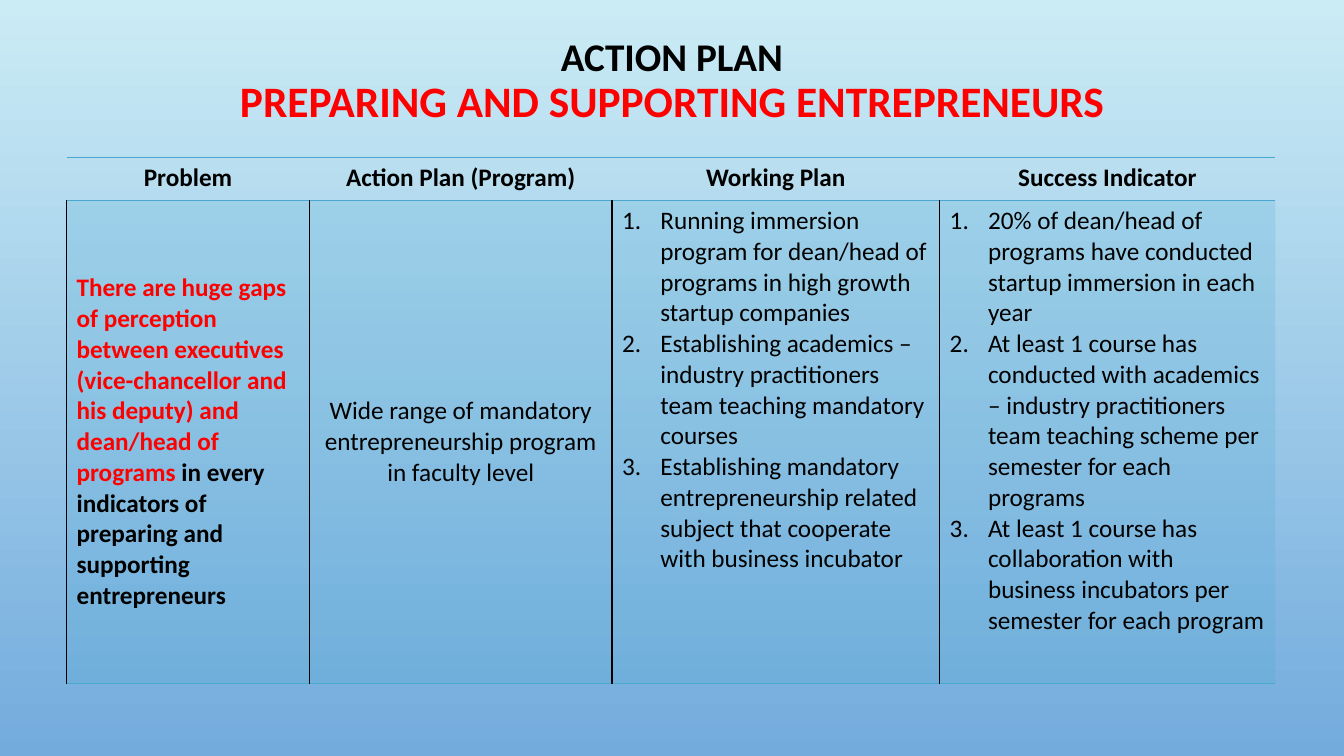
"""Build the action plan slide for preparing and supporting entrepreneurs."""
from pptx import Presentation
from pptx.dml.color import RGBColor
from pptx.enum.text import MSO_ANCHOR, PP_ALIGN
from pptx.oxml.ns import qn
from pptx.util import Inches, Pt
from lxml.etree import SubElement

FONT = "Calibri"
BLACK = RGBColor(0x00, 0x00, 0x00)
RED = RGBColor(0xFF, 0x00, 0x00)
TEAL = RGBColor(0x48, 0xA8, 0xD0)
SKY_TOP = RGBColor(0xCB, 0xEC, 0xF5)
SKY_BOTTOM = RGBColor(0x73, 0xAB, 0xDD)

HEADERS = ["Problem", "Action Plan (Program)", "Working Plan", "Success Indicator"]
COLUMN_WIDTHS = [2.41, 3, 3.25, 3.33]
ROW_HEIGHTS = [0.43, 4.79]
PROBLEM = [
    ("There are huge gaps of perception between executives (vice-chancellor and "
     "his deputy) and dean/head of programs ", RED),
    ("in every indicators of preparing and supporting entrepreneurs", BLACK),
]
PROGRAM = "Wide range of mandatory entrepreneurship program in faculty level"
WORKING_PLAN = [
    "Running immersion program for dean/head of programs in high growth startup companies",
    "Establishing academics – industry practitioners team teaching mandatory courses",
    "Establishing mandatory entrepreneurship related subject that cooperate with "
    "business incubator",
]
SUCCESS_INDICATORS = [
    "20% of dean/head of programs have conducted startup immersion in each year",
    "At least 1 course has conducted with academics – industry practitioners team "
    "teaching scheme per semester for each programs",
    "At least 1 course has collaboration with business incubators per semester for "
    "each program",
]


def format_run(r, size=18, color=BLACK, bold=False):
    """Set the font of a run."""
    r.font.name = FONT
    r.font.size = Pt(size)
    r.font.bold = bold
    r.font.color.rgb = color


def set_background(s):
    """Fill the slide with a vertical gradient."""
    fill = s.background.fill
    fill.gradient()
    fill.gradient_angle = 270
    for stop, color in zip(fill.gradient_stops, (SKY_TOP, SKY_BOTTOM)):
        stop.color.rgb = color


def add_title(s):
    """Add the two-line title."""
    box = s.shapes.add_textbox(Inches(1), Inches(0.31), Inches(11.33), Inches(1.02))
    tf = box.text_frame
    tf.word_wrap = True
    tf.vertical_anchor = MSO_ANCHOR.MIDDLE
    p = tf.paragraphs[0]
    p.text = "ACTION PLAN\vPREPARING AND SUPPORTING ENTREPRENEURS"
    p.alignment = PP_ALIGN.CENTER
    p.line_spacing = 0.9
    for r, size, color in zip(p.runs, (28, 31), (BLACK, RED)):
        format_run(r, size, color, True)


def set_borders(cell, **colors):
    """Draw the named cell borders and clear the others."""
    tcPr = cell._tc.get_or_add_tcPr()
    for i, side in enumerate("LRTB"):
        ln = SubElement(tcPr, qn(f"a:ln{side}"), w=str(Pt(1)))
        if side in colors:
            fill = SubElement(ln, qn("a:solidFill"))
            SubElement(fill, qn("a:srgbClr"), val=str(colors[side]))
        else:
            SubElement(ln, qn("a:noFill"))
        tcPr.insert(i, ln)


def fill_translucent(cell):
    """Tint a cell at twenty percent opacity."""
    cell.fill.solid()
    cell.fill.fore_color.rgb = TEAL
    color = cell._tc.get_or_add_tcPr().find(f".//{qn('a:srgbClr')}")
    SubElement(color, qn("a:alpha"), val="20000")


def write_centered(cell, text, bold=False):
    """Write one centred paragraph in a cell."""
    p = cell.text_frame.paragraphs[0]
    p.text = text
    p.alignment = PP_ALIGN.CENTER
    format_run(p.runs[0], bold=bold)


def write_problem(cell):
    """Write the two-colour problem statement."""
    p = cell.text_frame.paragraphs[0]
    for text, color in PROBLEM:
        r = p.add_run()
        r.text = text
        format_run(r, color=color, bold=True)


def write_numbered(cell, items):
    """Write a numbered list in a cell."""
    tf = cell.text_frame
    tf.text = "\n".join(items)
    for p in tf.paragraphs:
        pPr = p._p.get_or_add_pPr()
        pPr.set("marL", str(Inches(0.38)))
        pPr.set("indent", str(Inches(-0.38)))
        SubElement(pPr, qn("a:buFont"), typeface="+mj-lt")
        SubElement(pPr, qn("a:buAutoNum"), type="arabicPeriod")
        format_run(p.runs[0])


def add_plan_table(s):
    """Add the action plan table."""
    frame = s.shapes.add_table(2, 4, Inches(0.66), Inches(1.56), Inches(11.99), Inches(5.33))
    table = frame.table
    table.first_row = table.horz_banding = False
    for column, width in zip(table.columns, COLUMN_WIDTHS):
        column.width = Inches(width)
    for row, height in zip(table.rows, ROW_HEIGHTS):
        row.height = Inches(height)
    frame.height = Inches(5.33)

    for i, header in enumerate(HEADERS):
        head, body = table.cell(0, i), table.cell(1, i)
        write_centered(head, header, bold=True)
        head.fill.background()
        set_borders(head, T=TEAL, B=TEAL)
        fill_translucent(body)
        sides = {"L": BLACK, "T": TEAL, "B": TEAL}
        if i < len(HEADERS) - 1:
            sides["R"] = BLACK
        set_borders(body, **sides)

    problem, program, working, success = table.rows[1].cells
    write_problem(problem)
    write_centered(program, PROGRAM)
    for cell in (problem, program):
        cell.vertical_anchor = MSO_ANCHOR.MIDDLE
    write_numbered(working, WORKING_PLAN)
    write_numbered(success, SUCCESS_INDICATORS)


def main():
    """Build and save the slide."""
    prs = Presentation()
    prs.slide_width, prs.slide_height = Inches(13.33), Inches(7.5)
    s = prs.slides.add_slide(prs.slide_layouts[6])
    set_background(s)
    add_title(s)
    add_plan_table(s)
    prs.save("out.pptx")


if __name__ == "__main__":
    main()
